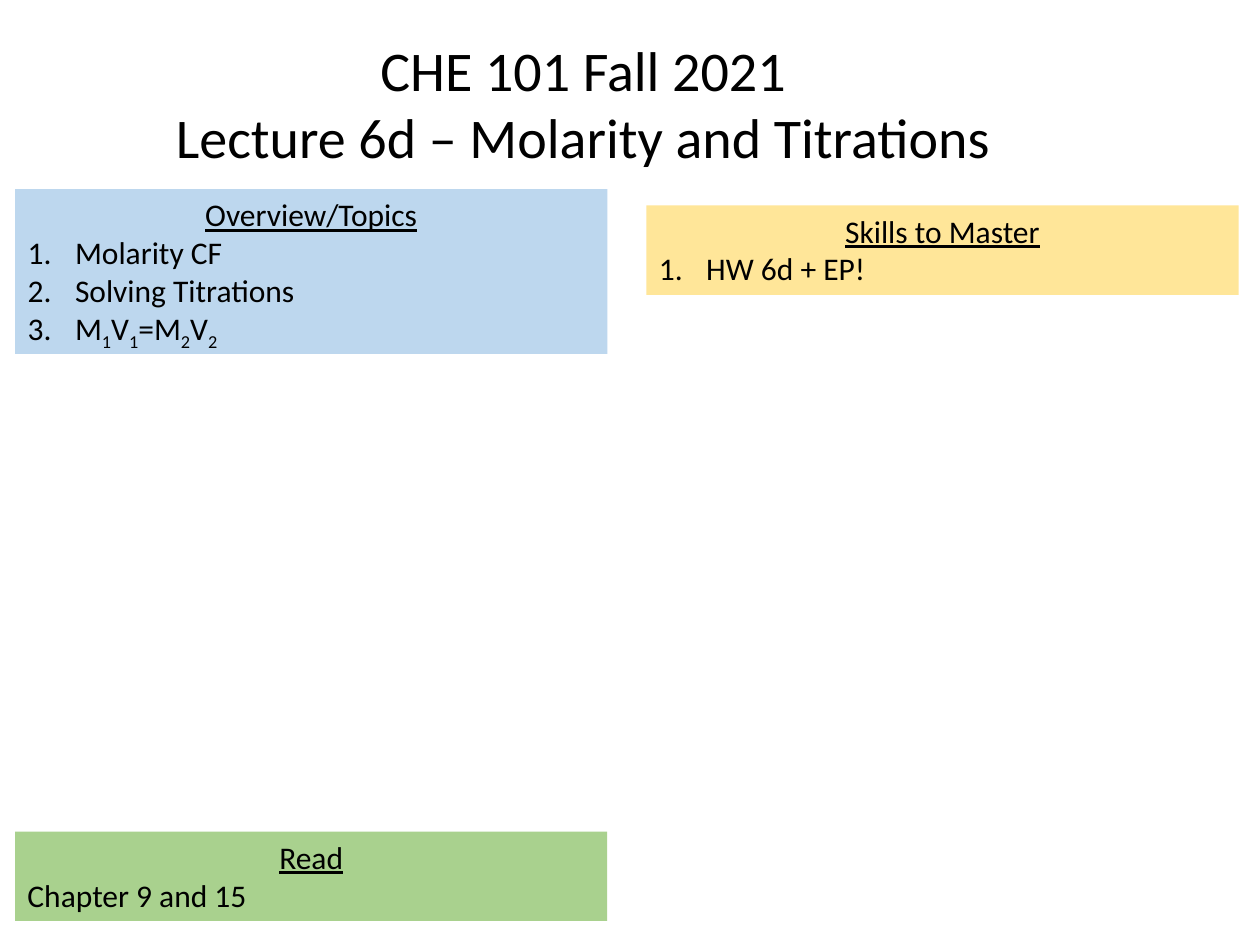
import pptx
import pptx.util
import pptx.dml.color
import pptx.enum.text
import lxml.etree
from pptx.oxml.ns import qn

COLORS = {"text": "000000", "topics": "BDD7EE", "skills": "FFE699", "reading": "A9D18E"}
INCH = pptx.util.Inches
ALIGN = pptx.enum.text.PP_ALIGN
LEFT, RIGHT, CARD_WIDTH = 0.12, 5.13, 4.7
LINE_HEIGHT, CARD_PADDING = 0.3, 0.11
HANGING = 0.375


def place(shape, left, top, width, height):
    """Move a shape to a box given in inches."""
    shape.left, shape.top = INCH(left), INCH(top)
    shape.width, shape.height = INCH(width), INCH(height)


def format_para(para, size, align):
    """Give a paragraph the shared font, alignment and tight spacing."""
    para.alignment = align
    para.line_spacing = 1.0
    para.space_before = para.space_after = pptx.util.Pt(0)
    para.font.name = "Calibri"
    para.font.size = pptx.util.Pt(size)
    para.font.color.rgb = pptx.dml.color.RGBColor.from_string(COLORS["text"])


def set_marker(para, numbered):
    """Number a paragraph with a hanging indent, or clear its bullet."""
    props = para._p.get_or_add_pPr()
    indent = INCH(HANGING) if numbered else 0
    props.set("marL", str(indent))
    props.set("indent", str(-indent))
    if numbered:
        font = lxml.etree.SubElement(props, qn("a:buFont"))
        font.set("typeface", "+mj-lt")
        marker = lxml.etree.SubElement(props, qn("a:buAutoNum"))
        marker.set("type", "arabicPeriod")
    else:
        marker = lxml.etree.SubElement(props, qn("a:buNone"))
    props.remove(marker)
    props.insert_element_before(marker, "a:tabLst", "a:defRPr", "a:extLst")
    if numbered:
        props.remove(font)
        marker.addprevious(font)


def add_spans(para, text):
    """Write text whose parts between underscores are subscripts."""
    for index, part in enumerate(text.split("_")):
        if part:
            span = para.add_run()
            span.text = part
            if index % 2:
                span._r.get_or_add_rPr().set("baseline", "-25000")


def fill_title(shape, lines):
    """Set the centred lecture heading."""
    place(shape, 1.26, 0.23, 6.74, 1.18)
    frame = shape.text_frame
    frame.word_wrap = False
    frame.auto_size = pptx.enum.text.MSO_AUTO_SIZE.NONE
    frame.vertical_anchor = pptx.enum.text.MSO_ANCHOR.TOP
    frame.text = "\n".join(lines)
    for para in frame.paragraphs:
        format_para(para, 32, ALIGN.CENTER)


def fill_card(shape, left, top, color, heading, lines, numbered=True):
    """Set a coloured card with an underlined heading over its lines."""
    rows = len(lines) + 1
    place(shape, left, top, CARD_WIDTH, rows * LINE_HEIGHT + CARD_PADDING)
    shape.fill.solid()
    shape.fill.fore_color.rgb = pptx.dml.color.RGBColor.from_string(COLORS[color])
    frame = shape.text_frame
    frame.word_wrap = True
    frame.auto_size = pptx.enum.text.MSO_AUTO_SIZE.NONE
    frame.vertical_anchor = pptx.enum.text.MSO_ANCHOR.TOP
    title = frame.paragraphs[0]
    title.text = heading
    format_para(title, 18, ALIGN.CENTER)
    title.font.underline = True
    title.runs[0].font.underline = True
    set_marker(title, False)
    for line in lines:
        para = frame.add_paragraph()
        add_spans(para, line)
        format_para(para, 18, ALIGN.LEFT)
        set_marker(para, numbered)


def main():
    """Build and save the lecture overview."""
    deck = pptx.Presentation()
    deck.slide_width, deck.slide_height = INCH(10), INCH(7.5)
    page = deck.slides.add_slide(deck.slide_layouts[3])
    title, topics, skills = list(page.placeholders)[:3]
    for extra in list(page.placeholders)[3:]:
        extra.element.getparent().remove(extra.element)
    fill_title(title, ["CHE 101 Fall 2021", "Lecture 6d – Molarity and Titrations"])
    fill_card(topics, LEFT, 1.5, "topics", "Overview/Topics",
              ["Molarity CF", "Solving Titrations", "M_1_V_1_=M_2_V_2_"])
    fill_card(skills, RIGHT, 1.63, "skills", "Skills to Master", ["HW 6d + EP!"])
    reading = page.shapes.add_textbox(0, 0, 0, 0)
    fill_card(reading, LEFT, 6.6, "reading", "Read", ["Chapter 9 and 15"], numbered=False)
    deck.save("out.pptx")


if __name__ == "__main__":
    main()
